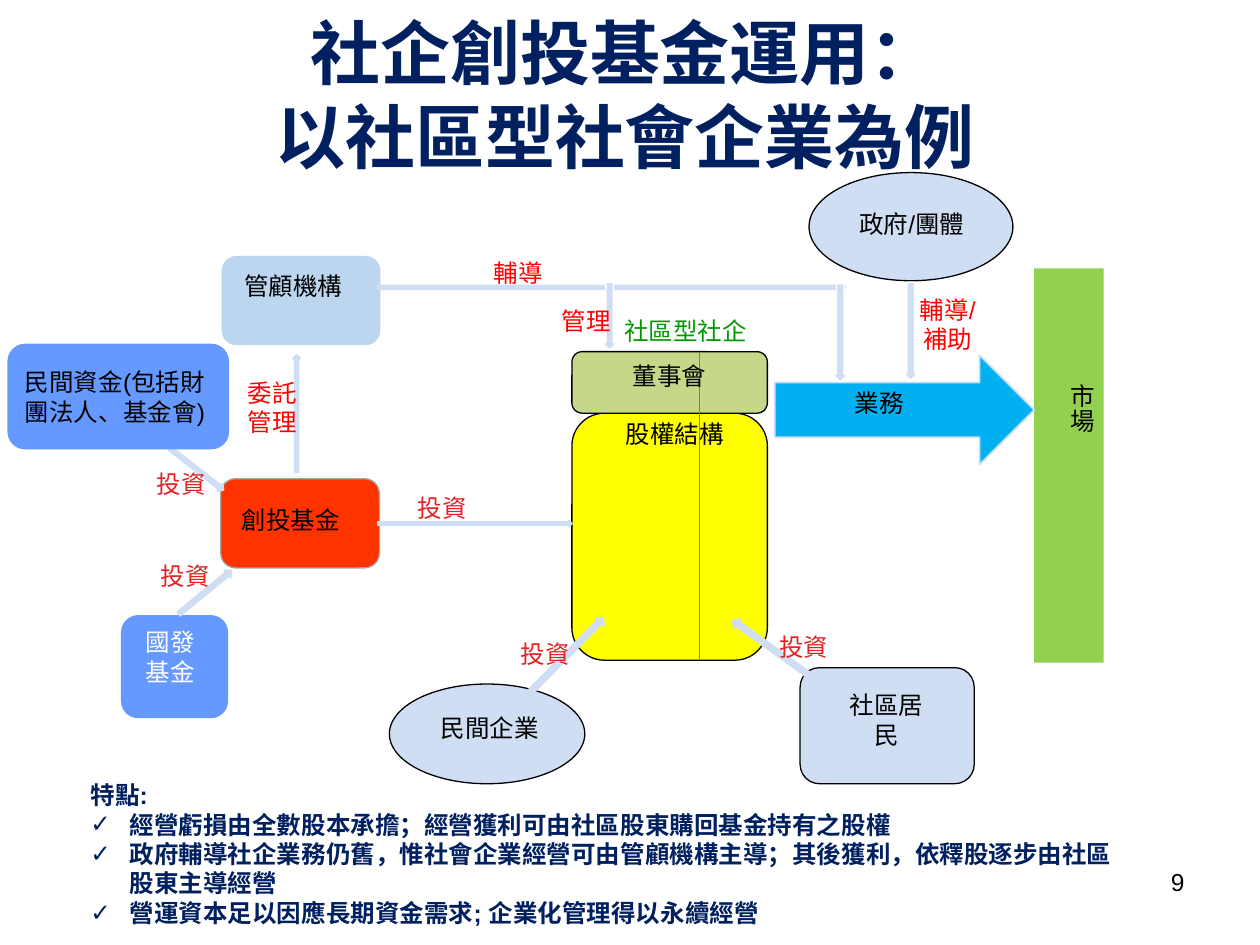
import pptx
import pptx.util
import pptx.dml.color
import pptx.enum.shapes
import pptx.enum.text
import pptx.oxml.ns
import lxml.etree

Cm = pptx.util.Cm
Pt = pptx.util.Pt
KIND = pptx.enum.shapes.MSO_SHAPE
ALIGN = pptx.enum.text.PP_ALIGN
ANCHOR = pptx.enum.text.MSO_ANCHOR
qn = pptx.oxml.ns.qn

COLOURS = {
    "navy": "002060", "black": "000000", "white": "FFFFFF", "pale": "CFDEF3",
    "yellow": "FFFF00", "olive": "C5D788", "sky": "BBD6EE", "orange": "FF3300",
    "grey": "A5A5A5", "cyan": "00B0F0", "lime": "92D050", "blue": "6699FF",
    "red": "FF0000", "crimson": "E42222", "green": "009900", "divider": "589A3E",
}

BOXES = [
    (KIND.ROUNDED_RECTANGLE, (11.53, 8.33, 3.94, 4.98), "yellow", "black"),
    (KIND.ROUNDED_RECTANGLE, (11.53, 7.09, 3.94, 1.24), "olive", "black"),
    (KIND.ROUNDED_RECTANGLE, (4.47, 5.16, 3.2, 1.8), "sky", None),
    (KIND.ROUNDED_RECTANGLE, (4.45, 9.65, 3.2, 1.8), "orange", "grey"),
    (KIND.OVAL, (7.85, 13.79, 3.94, 2.01), "pale", "black"),
    (KIND.ROUNDED_RECTANGLE, (16.13, 13.46, 3.51, 2.34), "pale", "black"),
    (KIND.OVAL, (16.31, 3.48, 4.11, 2.18), "pale", "black"),
    (KIND.RECTANGLE, (20.85, 5.41, 1.4, 7.95), "lime", None),
    (KIND.ROUNDED_RECTANGLE, (2.44, 12.4, 2.16, 2.08), "blue", None),
]

FLOWS = [
    ((4.8, 8.26, 2.36, 0.15), 270),
    ((7.62, 10.49, 3.91, 0.13), 0),
    ((7.62, 5.72, 9.42, 0.15), 0),
    ((10.16, 13.18, 2.36, 0.23), 314.6),
    ((14.55, 13.08, 2.36, 0.23), 215.7),
    ((3.45, 11.84, 1.37, 0.2), 320.5),
    ((3.28, 9.37, 1.37, 0.18), 37.9),
]

DROPS = [(16.79, 5.72, 0.3, 1.98), (12.14, 5.69, 0.3, 1.37), (18.21, 5.69, 0.3, 1.98)]

LABELS = [
    (["股權結構"], (12.09, 8.33, 3.02, 0.86), "black", ALIGN.CENTER),
    (["董事會"], (12.09, 7.16, 2.82, 0.86), "black", ALIGN.CENTER),
    (["管顧機構"], (4.67, 5.33, 3.12, 1.45), "black", ALIGN.LEFT),
    (["創投基金"], (4.62, 10.06, 3, 0.86), "black", ALIGN.LEFT),
    (["委託管理"], (4.75, 7.49, 1.65, 2.06), "red", ALIGN.LEFT),
    (["輔導"], (8.69, 5.08, 3.51, 0.86), "red", ALIGN.CENTER),
    (["民間企業"], (8.2, 14.25, 3.35, 0.86), "black", ALIGN.CENTER),
    (["社區居民"], (16.79, 13.79, 2.16, 1.45), "black", ALIGN.CENTER),
    (["社區型社企"], (12.07, 6.25, 3.51, 0.86), "green", ALIGN.CENTER),
    (["業務"], (16.31, 7.7, 2.84, 0.86), "black", ALIGN.CENTER),
    (["管理"], (11.07, 6.05, 3.18, 0.86), "red", ALIGN.LEFT),
    (["政府/團體"], (17.07, 4.09, 2.9, 0.86), "black", ALIGN.LEFT),
    (["輔導/", "補助"], (17.35, 5.82, 3.51, 1.45), "red", ALIGN.CENTER),
    (["國發", "基金"], (2.69, 12.52, 1.93, 1.45), "white", ALIGN.LEFT),
    (["9"], (18.21, 17.35, 5.92, 1.32), "black", ALIGN.RIGHT),
]

INVESTMENTS = [(7.39, 9.47), (9.47, 12.42), (14.68, 12.27), (2.13, 8.99), (2.21, 10.85)]

FEATURES = [
    "經營虧損由全數股本承擔；經營獲利可由社區股東購回基金持有之股權",
    "政府輔導社企業務仍舊，惟社會企業經營可由管顧機構主導；其後獲利，依釋股逐步由社區股東主導經營",
    "營運資本足以因應長期資金需求; 企業化管理得以永續經營",
]


def rgb(name):
    return pptx.dml.color.RGBColor.from_string(COLOURS[name])


def place(item, area):
    item.left, item.top, item.width, item.height = (Cm(length) for length in area)


def add_span(para, text, colour, size=14, bold=False, face="Arial"):
    span = para.add_run()
    span.text = text
    span.font.size = Pt(size)
    span.font.bold = bold
    span.font.name = face
    span.font.color.rgb = rgb(colour)
    return span


def fill_frame(frame, lines, colour, align, bold=False):
    frame.word_wrap = True
    for index, line in enumerate(lines):
        para = frame.add_paragraph() if index else frame.paragraphs[0]
        para.alignment = align
        add_span(para, line, colour, bold=bold)


def add_box(page, kind, area, fill, line=None, weight=0.75):
    box = page.shapes.add_shape(kind, *(Cm(length) for length in area))
    box.shadow.inherit = False
    box.fill.solid()
    box.fill.fore_color.rgb = rgb(fill)
    if line:
        box.line.color.rgb = rgb(line)
        box.line.width = Pt(weight)
    else:
        box.line.fill.background()
    return box


def add_label(page, lines, area, colour, align, anchor=ANCHOR.TOP):
    box = page.shapes.add_textbox(*(Cm(length) for length in area))
    fill_frame(box.text_frame, lines, colour, align)
    box.text_frame.vertical_anchor = anchor
    return box


def add_divider(page, x, top, bottom):
    divider = page.shapes.add_connector(
        pptx.enum.shapes.MSO_CONNECTOR.STRAIGHT, Cm(x), Cm(top), Cm(x), Cm(bottom))
    divider.line.color.rgb = rgb("divider")
    divider.line.width = Pt(0.75)
    lxml.etree.SubElement(divider._element.spPr, qn("a:effectLst"))


def write_title(page):
    title = page.shapes.title
    place(title, (1.27, 0.53, 22.66, 2.72))
    frame = title.text_frame
    frame.auto_size = pptx.enum.text.MSO_AUTO_SIZE.NONE
    frame.vertical_anchor = ANCHOR.MIDDLE
    para = frame.paragraphs[0]
    para.alignment = ALIGN.CENTER
    for index, line in enumerate(["社企創投基金運用：", "以社區型社會企業為例"]):
        if index:
            para.add_line_break()
        face = "Noto Sans CJK SC"
        span = add_span(para, line, "navy", 40, True, face)
        asian = lxml.etree.SubElement(span.font._element, qn("a:ea"))
        asian.set("typeface", face)


def write_features(page):
    body = page.placeholders[1]
    place(body, (1.57, 15.6, 21.13, 3.25))
    frame = body.text_frame
    frame.auto_size = pptx.enum.text.MSO_AUTO_SIZE.NONE
    fill_frame(frame, ["特點:"] + FEATURES, "navy", ALIGN.LEFT, True)
    for index, para in enumerate(frame.paragraphs):
        para.space_before = Pt(0)
        indent = Cm(0.79) if index else 0
        properties = para._p.get_or_add_pPr()
        properties.set("marL", str(indent))
        properties.set("indent", str(-indent))
        bullet = lxml.etree.SubElement(properties, qn("a:buChar" if index else "a:buNone"))
        if index:
            bullet.set("char", "✓")


def main():
    deck = pptx.Presentation()
    deck.slide_width, deck.slide_height = Cm(25.4), Cm(19.05)
    page = deck.slides.add_slide(deck.slide_layouts[1])
    write_title(page)
    for kind, area, fill, line in BOXES:
        add_box(page, kind, area, fill, line)
    add_divider(page, 14.1, 7.09, 13.28)
    add_box(page, KIND.RIGHT_ARROW, (15.62, 7.16, 5.23, 2.21), "cyan", "pale", 1)
    for area, angle in FLOWS:
        add_box(page, KIND.RIGHT_ARROW, area, "pale", "pale", 1).rotation = angle
    for area in DROPS:
        add_box(page, KIND.DOWN_ARROW, area, "pale", "white")
    funds = add_box(page, KIND.ROUNDED_RECTANGLE, (0.15, 6.93, 4.47, 2.13), "blue")
    fill_frame(funds.text_frame, ["民間資金(包括財團法人、基金會)"], "black", ALIGN.LEFT)
    for lines, area, colour, align in LABELS:
        add_label(page, lines, area, colour, align)
    for left, top in INVESTMENTS:
        add_label(page, ["投資"], (left, top, 3.05, 1.52), "crimson", ALIGN.CENTER, ANCHOR.MIDDLE)
    market = add_label(page, ["市場"], (21.11, 7.49, 1.12, 2.97), "black", ALIGN.LEFT)
    market.text_frame._txBody.bodyPr.set("vert", "eaVert")
    write_features(page)
    deck.save("out.pptx")


if __name__ == "__main__":
    main()
